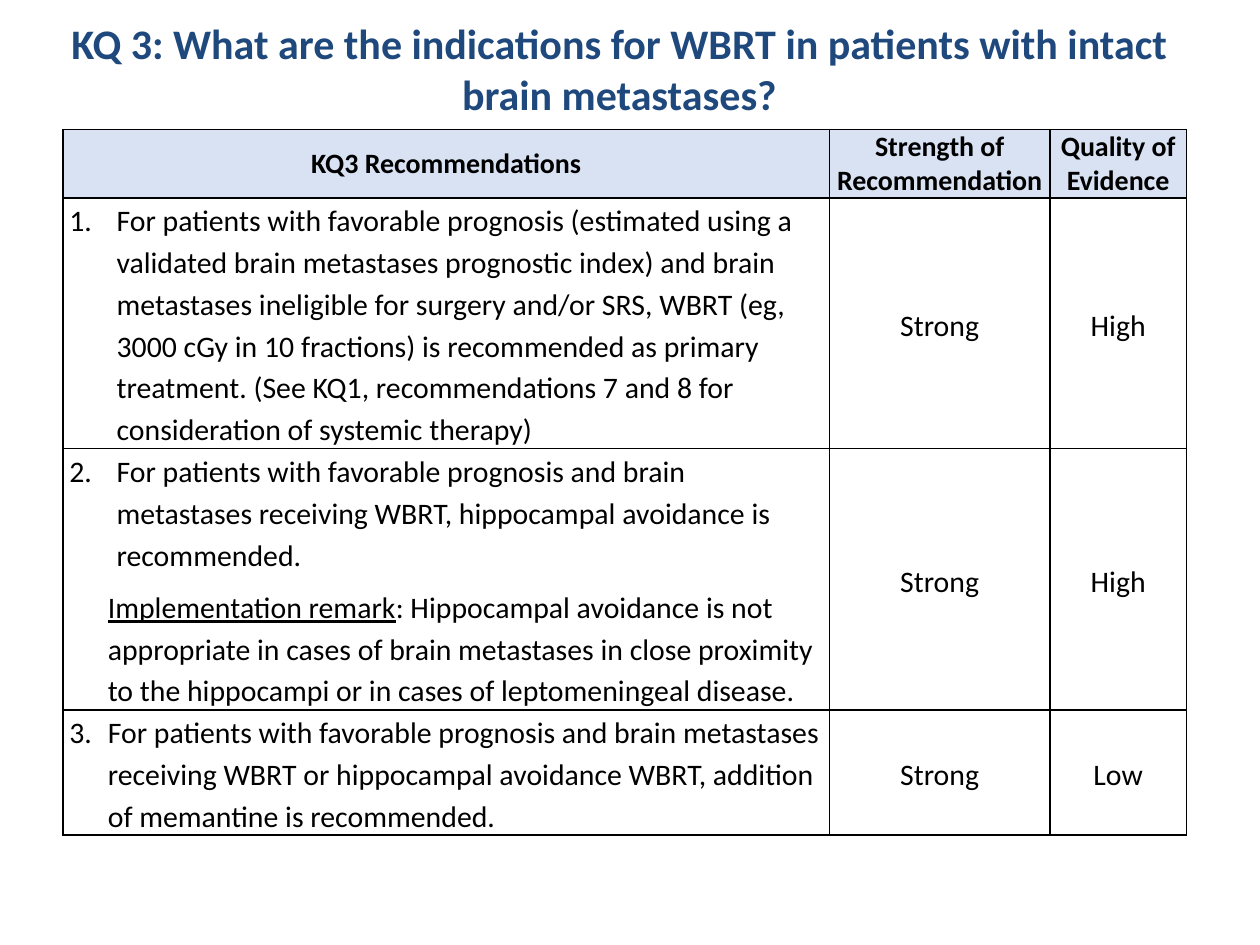
from lxml import etree
from pptx import Presentation
from pptx import util as u
from pptx.dml import color as c
from pptx.enum import text as t
from pptx.oxml import ns

Pt = u.Pt
HUES = {"title": "1F497D", "text": "000000", "head": "D9E2F3", "line": "000000"}
COLS = [438, 126, 78]
ROWS = [39, 142, 124.5, 70.5]
HEADS = ["KQ3 Recommendations", "Strength of Recommendation", "Quality of Evidence"]

# Advice, hanging indent, remark (label and text), strength, quality
ITEMS = [
    ("For patients with favorable prognosis (estimated using a validated brain "
     "metastases prognostic index) and brain metastases ineligible for surgery "
     "and/or SRS, WBRT (eg, 3000 cGy in 10 fractions) is recommended as primary "
     "treatment. (See KQ1, recommendations 7 and 8 for consideration of systemic "
     "therapy)", 27, None, "Strong", "High"),
    ("For patients with favorable prognosis and brain metastases receiving WBRT, "
     "hippocampal avoidance is recommended.", 27,
     ("Implementation remark",
      ": Hippocampal avoidance is not appropriate in cases of brain metastases in "
      "close proximity to the hippocampi or in cases of leptomeningeal disease."),
     "Strong", "High"),
    ("For patients with favorable prognosis and brain metastases receiving WBRT or "
     "hippocampal avoidance WBRT, addition of memantine is recommended.", 22,
     None, "Strong", "Low"),
]


def style(para, size, hue="text", bold=False, align=t.PP_ALIGN.CENTER, gap=None):
    para.alignment = align
    if gap:
        para.line_spacing = gap
    font = para.font
    font.name, font.size, font.bold = "Calibri", Pt(size), bold
    font.color.rgb = c.RGBColor.from_string(HUES[hue])


def indent(para, left, hang=0, start=None):
    props = para._p.get_or_add_pPr()
    props.set("marL", str(Pt(left)))
    props.set("indent", str(-Pt(hang)))
    if start:
        etree.SubElement(props, ns.qn("a:buFont"), typeface="+mj-lt")
        etree.SubElement(props, ns.qn("a:buAutoNum"),
                         type="arabicPeriod", startAt=str(start))


def border(cell):
    props = cell._tc.get_or_add_tcPr()
    for spot, side in enumerate(("lnL", "lnR", "lnT", "lnB")):
        line = etree.Element(ns.qn("a:" + side), w=str(Pt(1)))
        fill = etree.SubElement(line, ns.qn("a:solidFill"))
        etree.SubElement(fill, ns.qn("a:srgbClr"), val=HUES["line"])
        props.insert(spot, line)


def frame(cell, fill=None, anchor=t.MSO_ANCHOR.MIDDLE):
    cell.margin_left = cell.margin_right = Pt(3.6)
    cell.margin_top = cell.margin_bottom = 0
    cell.vertical_anchor = anchor
    if fill:
        cell.fill.solid()
        cell.fill.fore_color.rgb = c.RGBColor.from_string(HUES[fill])
    else:
        cell.fill.background()
    border(cell)


def label(cell, words, size, fill=None, bold=False, gap=None):
    frame(cell, fill)
    para = cell.text_frame.paragraphs[0]
    para.text = words
    style(para, size, bold=bold, gap=gap)


def advice(cell, num, words, hang, remark):
    frame(cell, anchor=t.MSO_ANCHOR.TOP)
    para = cell.text_frame.paragraphs[0]
    para.text = words
    indent(para, hang, hang, num)
    style(para, 17, align=t.PP_ALIGN.LEFT, gap=1.15)
    if remark:
        para.space_after = Pt(6)
        note = cell.text_frame.add_paragraph()
        for part in remark:
            note.add_run().text = part
        note.runs[0].font.underline = True
        indent(note, 22)
        style(note, 17, align=t.PP_ALIGN.LEFT, gap=1.15)


def heading(slide, words):
    title = slide.shapes.title
    title.left, title.top, title.width, title.height = map(Pt, (30, 6, 648, 66))
    body = title.text_frame
    body.text = words
    body.auto_size = t.MSO_AUTO_SIZE.NONE
    body.vertical_anchor = t.MSO_ANCHOR.MIDDLE
    style(body.paragraphs[0], 24, "title", bold=True)


def grid(slide):
    table = slide.shapes.add_table(len(ROWS), len(COLS), Pt(36), Pt(74),
                                   Pt(sum(COLS)), Pt(sum(ROWS))).table
    for col, width in zip(table.columns, COLS):
        col.width = Pt(width)
    for row, height in zip(table.rows, ROWS):
        row.height = Pt(height)
    # Header row
    for col, words in enumerate(HEADS):
        label(table.cell(0, col), words, 16, "head", bold=True)
    # Numbered recommendations with their ratings
    for num, (words, hang, remark, *rates) in enumerate(ITEMS, 1):
        advice(table.cell(num, 0), num, words, hang, remark)
        for col, rate in enumerate(rates, 1):
            label(table.cell(num, col), rate, 17, gap=1.15)


def main():
    deck = Presentation()
    deck.slide_width, deck.slide_height = Pt(720), Pt(540)
    slide = deck.slides.add_slide(deck.slide_layouts[5])
    heading(slide, "KQ 3: What are the indications for WBRT in patients "
                   "with intact brain metastases?")
    grid(slide)
    deck.save("out.pptx")


if __name__ == "__main__":
    main()
